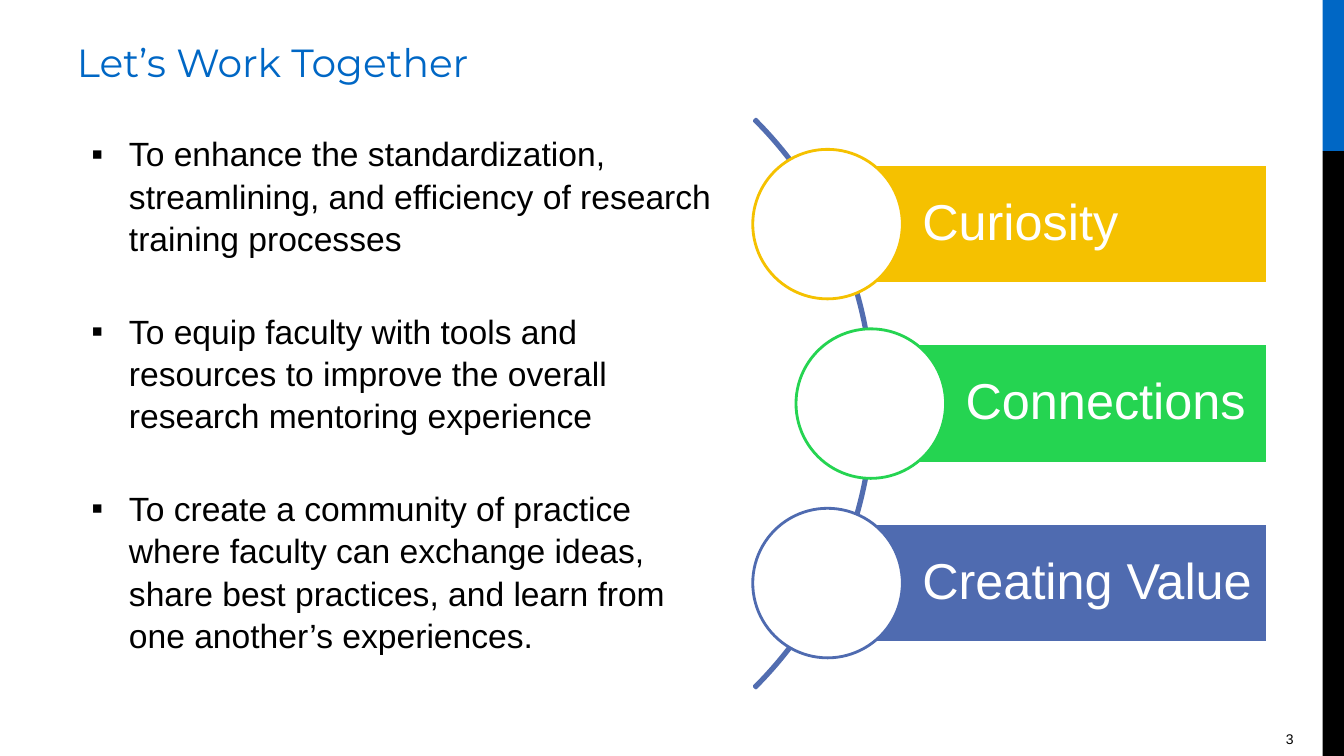
from lxml.etree import SubElement
from pptx import Presentation
from pptx.dml.color import RGBColor
from pptx.enum.shapes import MSO_SHAPE
from pptx.enum.text import MSO_ANCHOR, MSO_AUTO_SIZE, PP_ALIGN
from pptx.oxml.ns import qn
from pptx.util import Cm, Pt

HUES = {"blue": "0067C5", "black": "000000", "white": "FFFFFF", "gold": "F5C100",
        "green": "25D451", "slate": "4F6BB0", "arc": "526DB0"}
GOALS = [
    "To enhance the standardization, streamlining, and efficiency of research training processes",
    "To equip faculty with tools and resources to improve the overall research mentoring experience",
    "To create a community of practice where faculty can exchange ideas, share best practices, "
    "and learn from one another’s experiences.",
]
VALUES = [("Curiosity", "gold", 0), ("Connections", "green", 1.09), ("Creating Value", "slate", 0)]


def tint(name):
    """Return the named colour."""
    return RGBColor.from_string(HUES[name])


def place(shape, box):
    """Move a shape to a box given in centimetres."""
    shape.left, shape.top, shape.width, shape.height = map(Cm, box)


def write(shape, *lines, size, hue, font="Arial", align=PP_ALIGN.LEFT,
          anchor=MSO_ANCHOR.MIDDLE, inset=(0.25, 0.13, 0.25, 0.13), space=1.0, gap=0):
    """Write lines of text into a shape and return the paragraphs."""
    frame = shape.text_frame
    frame.text = "\n".join(lines)
    frame.word_wrap = True
    frame.auto_size = MSO_AUTO_SIZE.NONE
    frame.vertical_anchor = anchor
    (frame.margin_left, frame.margin_top,
     frame.margin_right, frame.margin_bottom) = map(Cm, inset)
    for para in frame.paragraphs:
        para.alignment = align
        para.line_spacing = space
        para.space_before = Pt(gap)
        face = para.runs[0].font
        face.name, face.size = font, Pt(size)
        face.color.rgb = tint(hue)
    return frame.paragraphs


def draw(shapes, kind, box, fill=None, line=None):
    """Add a preset shape with a plain fill and line."""
    shape = shapes.add_shape(kind, *map(Cm, box))
    shape.shadow.inherit = False
    if fill:
        shape.fill.solid()
        shape.fill.fore_color.rgb = tint(fill)
    else:
        shape.fill.background()
    if line:
        shape.line.color.rgb = tint(line)
        shape.line.width = Pt(2)
    else:
        shape.line.fill.background()
    return shape


def add_edge(slide, box):
    """Draw the two-colour strip down the slide's edge."""
    x, y, w, h = box
    cut = h / 5
    draw(slide.shapes, MSO_SHAPE.RECTANGLE, (x, y, w, cut), "blue")
    draw(slide.shapes, MSO_SHAPE.RECTANGLE, (x, y + cut, w, h - cut), "black")


def add_page(slide, box):
    """Add the page number."""
    note = slide.shapes.add_textbox(*map(Cm, box))
    write(note, "3", size=10, hue="black", align=PP_ALIGN.RIGHT,
          anchor=MSO_ANCHOR.TOP, inset=(0.25, 0.13, 1.27, 0.13))


def add_title(slide, box):
    """Fill the title placeholder."""
    place(slide.shapes.title, box)
    write(slide.shapes.title, "Let’s Work Together", size=28, hue="blue", font="Montserrat")


def add_goals(slide, box):
    """Fill the body placeholder with the bulleted goals."""
    body = slide.placeholders[1]
    place(body, box)
    paras = write(body, *GOALS, size=24, hue="black", anchor=MSO_ANCHOR.TOP,
                  space=1.05, gap=36)
    paras[0].space_before = Pt(3.6)
    for para in paras:
        props = para._p.get_or_add_pPr()
        props.set("marL", str(Cm(1.57)))
        props.set("indent", str(-Cm(0.95)))
        shade = SubElement(props, qn("a:buClr"))
        SubElement(shade, qn("a:srgbClr"), val=HUES["black"])
        SubElement(props, qn("a:buFont"), typeface="Arial")
        SubElement(props, qn("a:buChar"), char="▪")


def add_wheel(slide, box):
    """Draw the arc with its ringed value bars."""
    x, y, w, h = box
    bar, ring, span = h / 4, h / 4 * 1.25, 20.27
    step = (h - bar) / (len(VALUES) - 1)
    shapes = slide.shapes.add_group_shape().shapes
    arc = draw(shapes, MSO_SHAPE.BLOCK_ARC,
               (x - 17.22, y + (h - span) / 2, span, span), line="arc")
    for spot, value in enumerate((189, 27, 0.003)):
        arc.adjustments[spot] = value
    for row, (name, hue, shift) in enumerate(VALUES):
        top, left = y + row * step, x + shift
        start = left + ring / 2
        band = draw(shapes, MSO_SHAPE.RECTANGLE, (start, top, x + w - start, bar), hue, "white")
        write(band, name, size=36, hue="white", inset=(2.39, 0.25, 0.25, 0.25), space=0.9)
        draw(shapes, MSO_SHAPE.OVAL, (left, top + (bar - ring) / 2, ring, ring), "white", hue)


def main():
    """Build and save the slide."""
    deck = Presentation()
    deck.slide_width, deck.slide_height = Cm(33.87), Cm(19.05)
    slide = deck.slides.add_slide(deck.slide_layouts[1])
    add_edge(slide, (33.33, 0, 0.54, 19.05))
    add_page(slide, (27.09, 18.29, 6.78, 0.76))
    add_title(slide, (1.69, 0.79, 30.48, 1.52))
    add_goals(slide, (1.43, 3.18, 17.07, 15.24))
    add_wheel(slide, (18.97, 4.14, 12.98, 12.06))
    deck.save("out.pptx")


if __name__ == "__main__":
    main()
